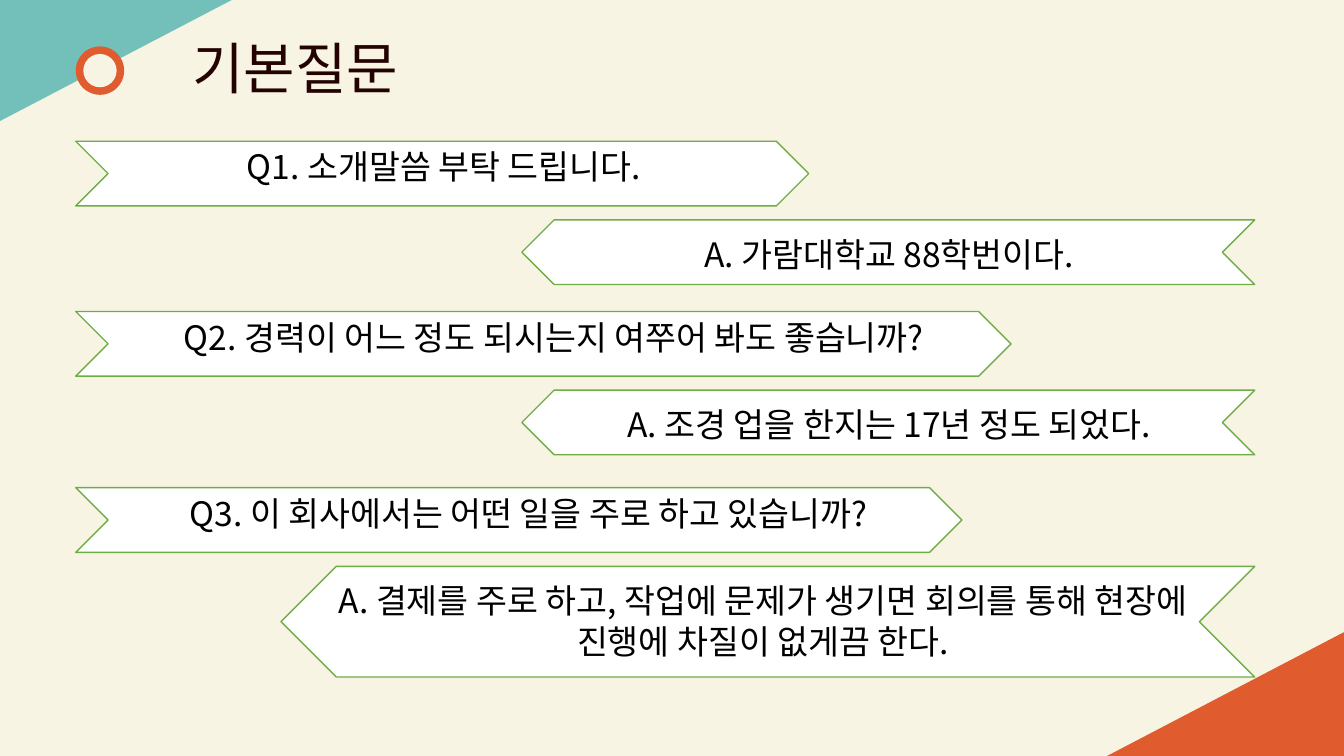
"""Build the basic questions slide with question and answer ribbons."""
from pptx import Presentation
from pptx.dml.color import RGBColor
from pptx.enum.shapes import MSO_SHAPE as Shape
from pptx.enum.text import MSO_ANCHOR as Anchor, MSO_AUTO_SIZE as Fit, PP_ALIGN as Align
from pptx.oxml.ns import qn
from pptx.util import Cm, Pt

FONT = "Noto Sans CJK KR"
CREAM, TEAL, ORANGE = "F7F4E3", "73C0BA", "E05B2E"
WIDE, HIGH = 33.87, 19.05
LEFT, RIGHT = 1.91, 31.62
ANSWER_GAP = 1.98
LINE, DOUBLE = 1.27, 2.31

TITLE = "기본질문"
# (top, (question, width, text width, text height), (answer, width, height, text width, text height))
PAIRS = [
    (3.56, ("Q1. 소개말씀 부탁 드립니다.", 18.47, 16.13, 2.24),
     ("A. 가람대학교 88학번이다.", 18.47, 1.63, 16.15, LINE)),
    (7.85, ("Q2. 경력이 어느 정도 되시는지 여쭈어 봐도 좋습니까?", 23.57, 21.67, LINE),
     ("A. 조경 업을 한지는 17년 정도 되었다.", 18.47, 1.63, 16.15, LINE)),
    (12.29, ("Q3. 이 회사에서는 어떤 일을 주로 하고 있습니까?", 22.33, 20.4, LINE),
     ("A. 결제를 주로 하고, 작업에 문제가 생기면 회의를 통해 현장에 진행에 차질이 없게끔 한다.",
      24.54, 2.79, 22.5, DOUBLE)),
]


def color(code):
    return RGBColor.from_string(code)


def write(box, text, size=24, ink="000000"):
    frame = box.text_frame
    frame.word_wrap = True
    frame.auto_size = Fit.NONE
    frame.vertical_anchor = Anchor.TOP
    para = frame.paragraphs[0]
    para.alignment = Align.CENTER
    para.line_spacing = 1.0
    run = para.add_run()
    run.text = text
    font = run.font
    font.name, font.size = FONT, Pt(size)
    font.color.rgb = color(ink)
    east = font._element.makeelement(qn("a:ea"), {"typeface": FONT})
    font._element.find(qn("a:latin")).addnext(east)


def draw(host, kind, x, y, w, h, fill, line=None, turn=0):
    shape = host.add_shape(kind, Cm(x), Cm(y), Cm(w), Cm(h))
    shape.shadow.inherit = False
    shape.fill.solid()
    shape.fill.fore_color.rgb = color(fill)
    shape.rotation = turn
    if line:
        shape.line.color.rgb = color(line)
        shape.line.width = Pt(1)
    else:
        shape.line.fill.background()
    return shape


def ribbon(host, text, x, y, w, h, text_x, text_y, text_w, text_h, turn=0):
    group = host.add_group_shape().shapes
    draw(group, Shape.CHEVRON, x, y, w, h, "FFFFFF", "70AD47", turn)
    box = group.add_textbox(Cm(text_x), Cm(text_y), Cm(text_w), Cm(text_h))
    write(box, text)


def main():
    deck = Presentation()
    deck.slide_width, deck.slide_height = Cm(WIDE), Cm(HIGH)
    slide = deck.slides.add_slide(deck.slide_layouts[5])
    slide.background.fill.solid()
    slide.background.fill.fore_color.rgb = color(CREAM)
    shapes = slide.shapes

    for x, y, w, h, fill, turn in [
        (WIDE - 5.97, HIGH - 3.12, 5.97, 3.12, ORANGE, 0),
        (0, 0, 5.84, 3.05, TEAL, 180),
    ]:
        corner = draw(shapes, Shape.ISOSCELES_TRIANGLE, x, y, w, h, fill, turn=turn)
        corner.adjustments[0] = 1

    title = shapes.title
    title.left, title.top = Cm(2.31), Cm(0.71)
    title.width, title.height = Cm(10.26), Cm(1.96)
    write(title, TITLE, size=40, ink="240202")

    ring = shapes.add_group_shape().shapes
    for size, fill in [(1.22, ORANGE), (0.84, CREAM)]:
        draw(ring, Shape.OVAL, 2.52 - size / 2, 1.78 - size / 2, size, size, fill)

    for top, (ask, ask_w, ask_text, ask_h), (reply, w, h, text_w, text_h) in PAIRS:
        ribbon(shapes, ask, LEFT, top, ask_w, 1.63, LEFT + 1.21, top, ask_text, ask_h)
        low = top + ANSWER_GAP
        ribbon(shapes, reply, RIGHT - w, low, w, h,
               RIGHT - 1.14 - text_w, low + 0.23, text_w, text_h, turn=180)

    deck.save("out.pptx")


if __name__ == "__main__":
    main()
